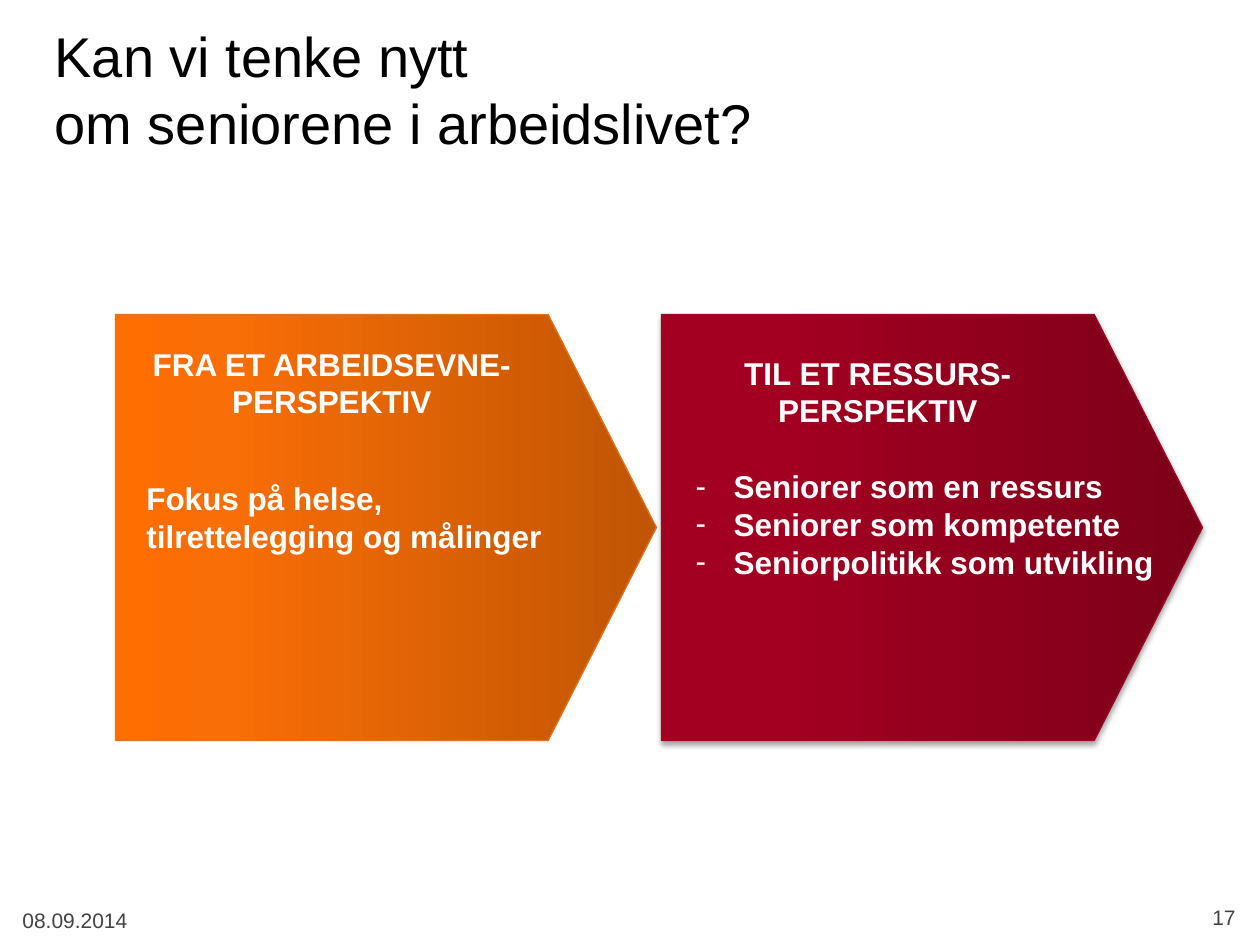
from pptx import Presentation
from pptx.dml.color import RGBColor
from pptx.enum.shapes import MSO_SHAPE
from pptx.enum.text import MSO_ANCHOR, MSO_AUTO_SIZE, PP_ALIGN
from pptx.oxml.ns import qn
from pptx.util import Pt
from lxml.etree import SubElement

SCALE = 914400 / 126


def px(num):
    return round(num * SCALE)


def color(code):
    return RGBColor.from_string(code)


def place(shape, left, top, width, height):
    shape.left, shape.top = px(left), px(top)
    shape.width, shape.height = px(width), px(height)


def style(font, size, code, bold):
    font.name = "Arial"
    font.size = Pt(size)
    font.bold = bold
    font.color.rgb = color(code)


def write(para, lines, size, code, bold=False, align=PP_ALIGN.LEFT):
    para.alignment = align
    for row, line in enumerate(lines):
        if row:
            para.add_line_break()
        run = para.add_run()
        run.text = line
        style(run.font, size, code, bold)


def add_title(slide, lines):
    title = slide.shapes.title
    place(title, 42, 10, 1008, 158)
    frame = title.text_frame
    frame.auto_size = MSO_AUTO_SIZE.NONE
    frame.vertical_anchor = MSO_ANCHOR.MIDDLE
    write(frame.paragraphs[0], lines, 32, "000000")


def add_text(slide, box, lines, size, code, bold=False, align=PP_ALIGN.LEFT):
    frame = slide.shapes.add_textbox(*map(px, box)).text_frame
    frame.word_wrap = True
    write(frame.paragraphs[0], lines, size, code, bold, align)


def add_list(slide, items):
    body = slide.placeholders[1]
    place(body, 683, 461, 550, 127)
    slide.shapes.element.append(body.element)
    frame = body.text_frame
    frame.auto_size = MSO_AUTO_SIZE.NONE
    for row, item in enumerate(items):
        para = frame.add_paragraph() if row else frame.paragraphs[0]
        props = para._p.get_or_add_pPr()
        props.set("marL", str(px(38)))
        props.set("indent", str(-px(38)))
        SubElement(props, qn("a:buFont"), typeface="Arial")
        SubElement(props, qn("a:buChar"), char="-")
        para.space_before = Pt(0)
        write(para, [item], 18, "FFFFFF", True)


def shade(fill, props, codes):
    fill.gradient()
    fill.gradient_angle = 90
    stops = props.find(qn("a:gradFill")).find(qn("a:gsLst"))
    stops.clear()
    for spot, code in zip((0, 80, 100), codes):
        stop = SubElement(stops, qn("a:gs"), pos=str(spot * 1000))
        SubElement(stop, qn("a:srgbClr"), val=code)


def add_shadow(props):
    glow = SubElement(props.find(qn("a:effectLst")), qn("a:outerShdw"),
                      blurRad=str(Pt(3.1)), dist=str(Pt(1.8)),
                      dir="5400000", rotWithShape="0")
    tint = SubElement(glow, qn("a:srgbClr"), val="000000")
    SubElement(tint, qn("a:alpha"), val="35000")


def add_arrow(slide, left, codes, edge, lines, inset):
    arrow = slide.shapes.add_shape(MSO_SHAPE.FLOWCHART_OFFPAGE_CONNECTOR,
                                   px(left), px(257), px(426), px(541))
    arrow.rotation = 270
    shade(arrow.fill, arrow.element.spPr, codes)
    arrow.line.color.rgb = color(edge)
    arrow.line.width = Pt(0.75)
    arrow.shadow.inherit = False
    frame = arrow.text_frame
    frame.word_wrap = False
    frame.vertical_anchor = MSO_ANCHOR.TOP
    frame.margin_left = frame.margin_top = frame.margin_bottom = 0
    frame.margin_right = px(inset)
    frame._txBody.bodyPr.set("vert", "vert")
    for row, line in enumerate(lines):
        para = frame.add_paragraph() if row else frame.paragraphs[0]
        write(para, [line], 18, "FFFFFF", True, PP_ALIGN.CENTER)
    return arrow


def main():
    deck = Presentation()
    deck.slide_width, deck.slide_height = px(1260), px(945)
    slide = deck.slides.add_slide(deck.slide_layouts[1])
    add_title(slide, ["Kan vi tenke nytt", "om seniorene i arbeidslivet?"])
    add_arrow(slide, 173, ("C05505", "F96E06", "FF6E01"), "E4731E",
              ["FRA ET ARBEIDSEVNE-", "PERSPEKTIV"], 30)
    goal = add_arrow(slide, 719, ("7D0019", "A30021", "A40021"), "9F0524",
                     ["TIL ET RESSURS-", "PERSPEKTIV"], 39)
    add_shadow(goal.element.spPr)
    add_list(slide, ["Seniorer som en ressurs", "Seniorer som kompetente",
                     "Seniorpolitikk som utvikling"])
    add_text(slide, (134, 473, 465, 89),
             ["Fokus på helse,", "tilrettelegging og målinger"],
             18, "FFFFFF", True)
    add_text(slide, (10, 901, 294, 40), ["08.09.2014"], 12, "424342")
    add_text(slide, (954, 898, 294, 40), ["17"], 12, "424342",
             align=PP_ALIGN.RIGHT)
    deck.save("out.pptx")


if __name__ == "__main__":
    main()
